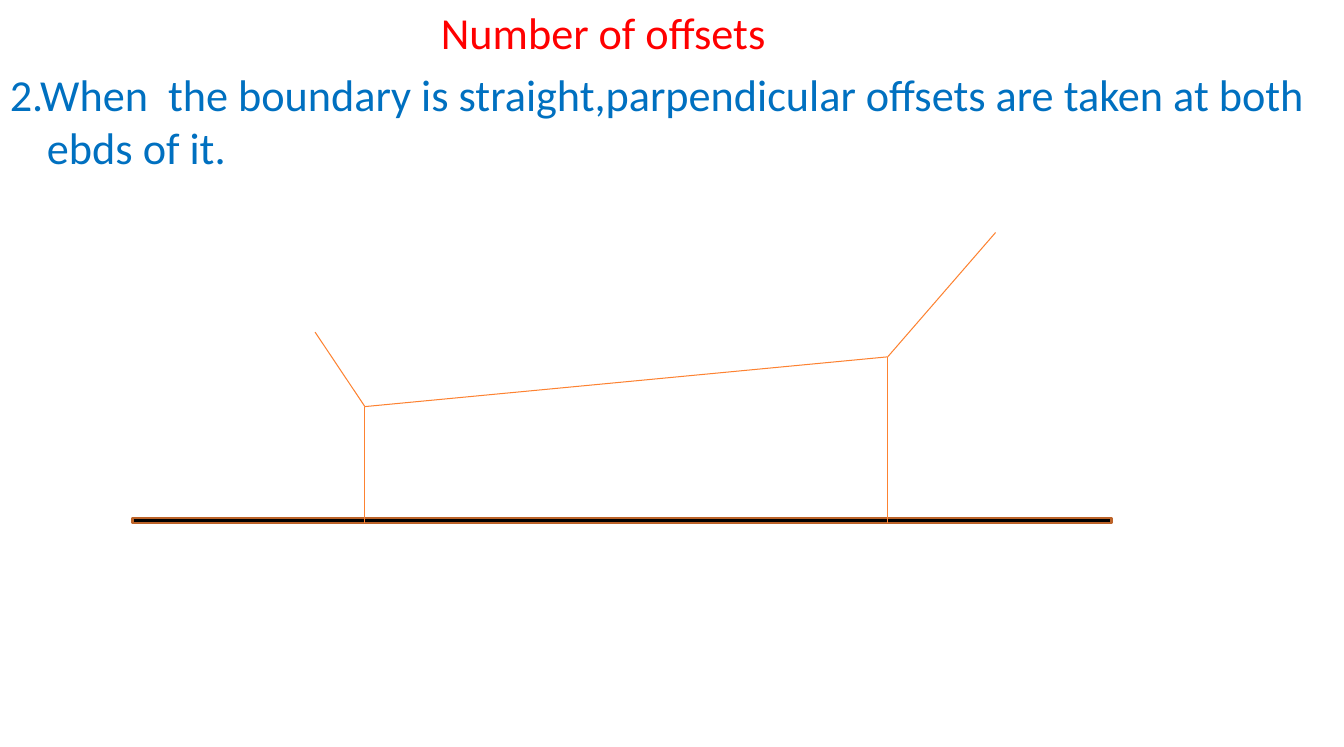
from itertools import pairwise

from lxml import etree
from pptx import Presentation
from pptx import util as u
from pptx.dml.color import RGBColor
from pptx.enum import shapes, text
from pptx.oxml import ns

RED = RGBColor(0xFF, 0x00, 0x00)
BLUE = RGBColor(0x00, 0x70, 0xC0)
BLACK = RGBColor(0x00, 0x00, 0x00)
BROWN = RGBColor(0xBC, 0x63, 0x29)
ORANGE = RGBColor(0xFD, 0x82, 0x31)


class OffsetSlide:
    """Draw text, bars and lines on one slide in a shared style."""

    font, size = "Calibri", u.Pt(32)

    def __init__(self, prs):
        self.s = prs.slides.add_slide(prs.slide_layouts[6])

    def textbox(self, x, y, w, h, paragraphs):
        sp = self.s.shapes.add_textbox(u.Cm(x), u.Cm(y), u.Cm(w), u.Cm(h))
        tf = sp.text_frame
        tf.word_wrap = True
        tf.vertical_anchor = text.MSO_ANCHOR.TOP
        for i, (words, color, margin, indent) in enumerate(paragraphs):
            p = tf.add_paragraph() if i else tf.paragraphs[0]
            p.space_before = u.Pt(6.4)
            pPr = p._p.get_or_add_pPr()
            pPr.set("marL", str(u.Cm(margin)))
            pPr.set("indent", str(u.Cm(indent)))
            r = p.add_run()
            r.text = words
            r.font.name, r.font.size = self.font, self.size
            r.font.color.rgb = color

    def bar(self, x, y, w, h, fill, line):
        sp = self.s.shapes.add_shape(
            shapes.MSO_SHAPE.RECTANGLE, u.Cm(x), u.Cm(y), u.Cm(w), u.Cm(h))
        sp.shadow.inherit = False
        sp.fill.solid()
        sp.fill.fore_color.rgb = fill
        sp.line.color.rgb = line
        sp.line.width = u.Pt(2)

    def line(self, start, end):
        c = self.s.shapes.add_connector(
            shapes.MSO_CONNECTOR.STRAIGHT, *map(u.Cm, start + end))
        c.line.color.rgb = ORANGE
        c.line.width = u.Pt(0.75)
        etree.SubElement(c._element.spPr, ns.qn("a:effectLst"))


def main():
    prs = Presentation()
    prs.slide_width, prs.slide_height = u.Cm(34.29), u.Cm(19.05)
    s = OffsetSlide(prs)
    s.textbox(0, 0, 34.29, 19.05, [
        ("Number of offsets", RED, 11, 0),
        ("2.When  the boundary is straight,parpendicular offsets are taken "
         "at both ebds of it.", BLUE, 0.95, -0.95),
    ])
    s.bar(3.39, 13.21, 24.98, 0.13, BLACK, BROWN)
    boundary = [(8.04, 8.47), (9.31, 10.37), (22.65, 9.1), (25.4, 5.93)]
    for start, end in pairwise(boundary):
        s.line(start, end)
    for x, y in boundary[1:-1]:
        s.line((x, y), (x, 13.34))
    prs.save("out.pptx")


if __name__ == "__main__":
    main()
